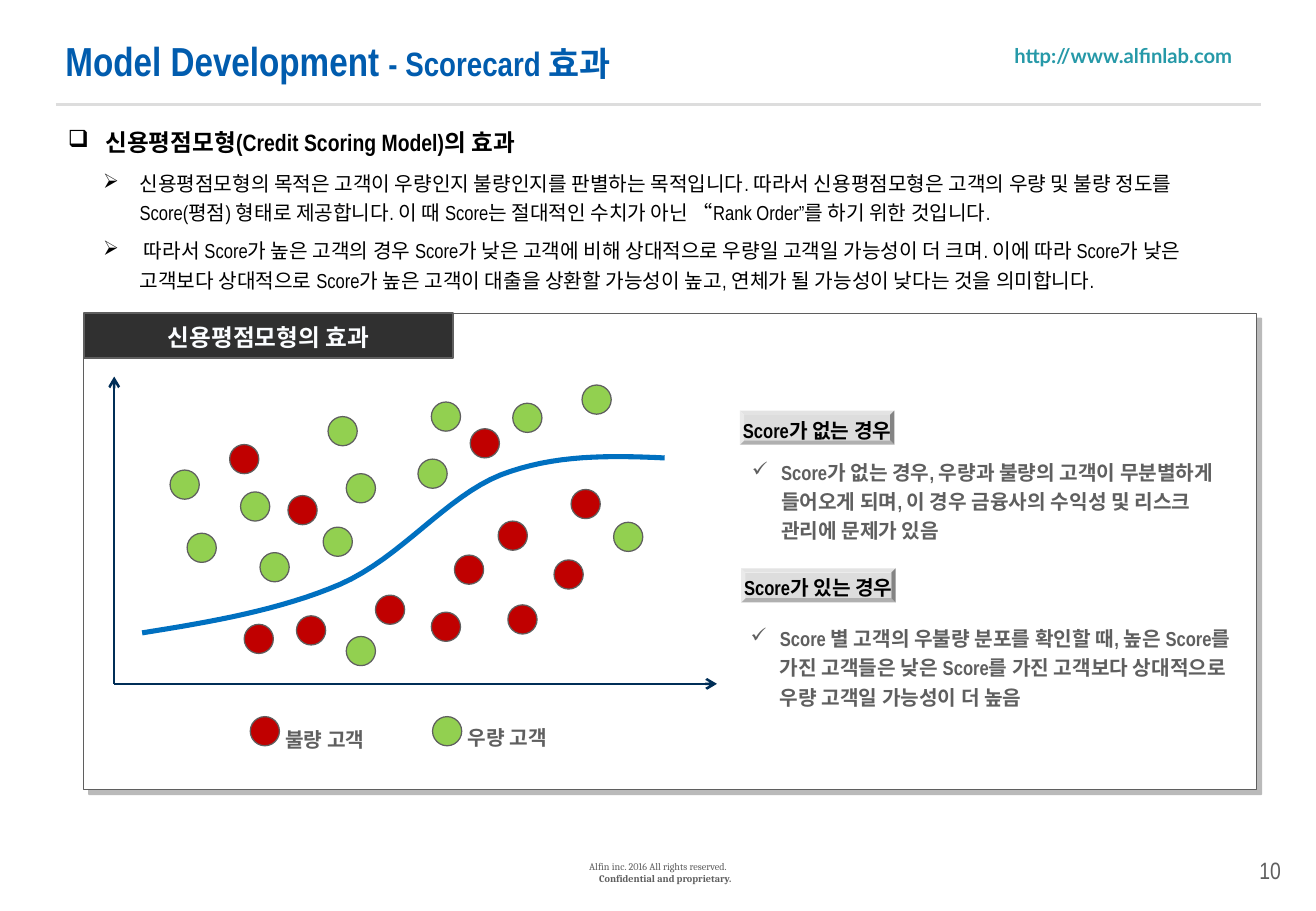
from dataclasses import dataclass
from typing import NamedTuple

from lxml import etree
from pptx import Presentation
from pptx.dml.color import RGBColor
from pptx.enum.shapes import MSO_CONNECTOR, MSO_SHAPE
from pptx.enum.text import MSO_ANCHOR, PP_ALIGN
from pptx.oxml.ns import qn
from pptx.util import Emu, Pt

PX = 9144  # EMU per px, 100 px to the inch
STRAIGHT = MSO_CONNECTOR.STRAIGHT
RECT, OVAL, BEVEL = MSO_SHAPE.RECTANGLE, MSO_SHAPE.OVAL, MSO_SHAPE.BEVEL
TOP, MIDDLE = MSO_ANCHOR.TOP, MSO_ANCHOR.MIDDLE
LEFT, CENTER, RIGHT = PP_ALIGN.LEFT, PP_ALIGN.CENTER, PP_ALIGN.RIGHT
NARROW = "Arial Narrow"
DOT = 24
CURVE_STEPS = 16

COLORS = {
    "white": "FFFFFF", "black": "000000", "gray": "5F5F5F", "silver": "DDDDDD",
    "header": "303030", "header_text": "FBFDFF", "title": "015CAE", "url": "2699A8",
    "axis": "002E57", "curve": "0070C0", "bad": "C00000", "good": "92D050",
    "shadow": "777777",
}


class Box(NamedTuple):
    left: int
    top: int
    width: int
    height: int


@dataclass
class Span:
    text: str
    size: float = 12
    color: str = "gray"
    bold: bool = True
    font: str = NARROW


@dataclass
class Para:
    spans: list[Span]
    align: PP_ALIGN = LEFT
    spacing: float = 1.0
    before: float = 0
    after: float = 0
    bullet: str = ""
    margin: int = 0
    hanging: int = 0


@dataclass
class Label:
    box: Box
    paras: list[Para]
    anchor: MSO_ANCHOR = MIDDLE


def rgb(name: str) -> RGBColor:
    return RGBColor.from_string(COLORS[name])


def place(box: Box) -> list[Emu]:
    return [Emu(value * PX) for value in box]


def write(frame, paras: list[Para], anchor: MSO_ANCHOR = MIDDLE, wrap: bool = True) -> None:
    frame.word_wrap = wrap
    frame.vertical_anchor = anchor
    for index, para in enumerate(paras):
        paragraph = frame.paragraphs[0] if index == 0 else frame.add_paragraph()
        paragraph.alignment = para.align
        paragraph.line_spacing = para.spacing
        paragraph.space_before = Pt(para.before)
        paragraph.space_after = Pt(para.after)
        properties = paragraph._p.get_or_add_pPr()
        properties.set("marL", str(para.margin * PX))
        properties.set("indent", str(-para.hanging * PX))
        if para.bullet:
            etree.SubElement(properties, qn("a:buChar")).set("char", para.bullet)
        for number, span in enumerate(para.spans):
            if number and para.spans[number - 1].text.endswith("."):
                paragraph.add_line_break()
            run = paragraph.add_run()
            run.text = span.text
            run.font.size = Pt(span.size)
            run.font.name = span.font
            run.font.bold = span.bold
            run.font.color.rgb = rgb(span.color)


def add_label(page, label: Label) -> None:
    frame = page.shapes.add_textbox(*place(label.box)).text_frame
    write(frame, label.paras, label.anchor)


def add_block(page, kind: MSO_SHAPE, box: Box, fill: str, line_width: float = 0.75):
    block = page.shapes.add_shape(kind, *place(box))
    block.shadow.inherit = False
    block.fill.solid()
    block.fill.fore_color.rgb = rgb(fill)
    if line_width:
        block.line.color.rgb = rgb("gray")
        block.line.width = Pt(line_width)
    else:
        block.line.fill.background()
    return block


def add_line(page, start: tuple[int, int], end: tuple[int, int], color: str,
             width: float, arrow: bool = False) -> None:
    points = [Emu(value * PX) for value in (*start, *end)]
    line = page.shapes.add_connector(STRAIGHT, *points)
    line.line.color.rgb = rgb(color)
    line.line.width = Pt(width)
    if arrow:
        etree.SubElement(line.line._get_or_add_ln(), qn("a:tailEnd")).set("type", "arrow")
    etree.SubElement(line._element.spPr, qn("a:effectLst"))


def add_hard_shadow(shape) -> None:
    effects = shape._element.spPr.find(qn("a:effectLst"))
    shadow = etree.SubElement(effects, qn("a:outerShdw"), blurRad="0", dist="53340",
                              dir="2700000", algn="ctr", rotWithShape="0")
    color = etree.SubElement(shadow, qn("a:srgbClr"), val=COLORS["shadow"])
    etree.SubElement(color, qn("a:alpha"), val="50000")


def add_curve(page, knots: list[tuple[int, int]]) -> None:
    """Draw cubic Bezier arcs: each knot is followed by two control points."""
    points = []
    for first in range(0, len(knots) - 1, 3):
        arc = knots[first:first + 4]
        for step in range(1, CURVE_STEPS + 1):
            t = step / CURVE_STEPS
            weights = ((1 - t) ** 3, 3 * t * (1 - t) ** 2, 3 * t * t * (1 - t), t ** 3)
            points.append(tuple(round(PX * sum(w * knot[axis] for w, knot in zip(weights, arc)))
                                for axis in (0, 1)))
    builder = page.shapes.build_freeform(knots[0][0] * PX, knots[0][1] * PX)
    builder.add_line_segments(points, close=False)
    curve = builder.convert_to_shape()
    curve.shadow.inherit = False
    curve.fill.background()
    curve.line.color.rgb = rgb("curve")
    curve.line.width = Pt(3)


def detail(text: str) -> Para:
    return Para([Span(text, color="black", bold=False)], spacing=1.2, before=2.4, after=3,
                bullet="➢", margin=59, hanging=30)


def check(text: str) -> Para:
    return Para([Span(text)], spacing=1.2, bullet="✓", margin=24, hanging=24)


LABELS = [
    Label(Box(0, 703, 1083, 30), [Para([
        Span("Alfin inc. 2016 All rights reserved.", 6, bold=False, font="Cambria"),
        Span("Confidential and proprietary.", 6, font="Cambria"),
    ], CENTER, margin=12, hanging=12)]),
    Label(Box(793, 19, 263, 54),
          [Para([Span("http://www.alfinlab.com", 12, "url", font="Lato")], CENTER)]),
    Label(Box(46, 96, 994, 160), [
        Para([Span("신용평점모형(Credit Scoring Model)의 효과", 14, "black")], spacing=1.2,
             after=3.5, bullet="❑", margin=31, hanging=31),
        detail("신용평점모형의 목적은 고객이 우량인지 불량인지를 판별하는 목적입니다. 따라서 "
               "신용평점모형은 고객의 우량 및 불량 정도를 Score(평점) 형태로 제공합니다. 이 때 "
               "Score는 절대적인 수치가 아닌 “Rank Order”를 하기 위한 것입니다."),
        detail(" 따라서 Score가 높은 고객의 경우 Score가 낮은 고객에 비해 상대적으로 우량일 고객일 "
               "가능성이 더 크며. 이에 따라 Score가 낮은 고객보다 상대적으로 Score가 높은 고객이 "
               "대출을 상환할 가능성이 높고, 연체가 될 가능성이 낮다는 것을 의미합니다."),
    ], TOP),
    Label(Box(811, 700, 253, 35), [Para([Span("10", 14, bold=False)], RIGHT)], TOP),
    Label(Box(44, 19, 995, 66), [Para([Span("Model Development ", 24, "title"),
                                       Span("- Scorecard 효과", 20, "title")], spacing=0.9)]),
    Label(Box(375, 586, 95, 39), [Para([Span("우량 고객")], spacing=1.2)]),
    Label(Box(225, 587, 88, 39), [Para([Span("불량 고객")], spacing=1.2)]),
    Label(Box(608, 507, 420, 83), [check(
        "Score 별 고객의 우불량 분포를 확인할 때, 높은 Score를 가진 고객들은 낮은 Score를 가진 "
        "고객보다 상대적으로 우량 고객일 가능성이 더 높음")], TOP),
    Label(Box(609, 370, 420, 83), [check(
        "Score가 없는 경우, 우량과 불량의 고객이 무분별하게 들어오게 되며, 이 경우 금융사의 "
        "수익성 및 리스크 관리에 문제가 있음")], TOP),
]
CASES = [(Box(609, 338, 127, 28), "Score가 없는 경우"),
         (Box(610, 468, 127, 28), "Score가 있는 경우")]
CURVE = [(547, 377), (502, 375), (456, 374), (412, 391), (367, 409),
         (330, 459), (280, 481), (231, 502), (174, 512), (117, 521)]
LEGEND_DOTS = {"bad": [(206, 590)], "good": [(356, 590)]}
CUSTOMER_DOTS = {
    "bad": [(470, 403), (410, 429), (374, 457), (456, 461), (309, 490), (244, 507), (355, 504),
            (201, 514), (418, 498), (387, 353), (237, 408), (189, 366)],
    "good": [(285, 524), (505, 430), (214, 455), (266, 434), (422, 332), (344, 378), (355, 331),
             (154, 439), (198, 405), (285, 390), (270, 343), (140, 387), (479, 317)],
}


def main() -> None:
    deck = Presentation()
    deck.slide_width, deck.slide_height = Emu(1083 * PX), Emu(750 * PX)
    page = deck.slides.add_slide(deck.slide_layouts[6])

    add_line(page, (46, 86), (1038, 86), "silver", 2.25)
    add_hard_shadow(add_block(page, RECT, Box(69, 258, 965, 392), "white"))
    header = add_block(page, RECT, Box(69, 258, 304, 37), "header", 1)
    write(header.text_frame, [Para([Span("신용평점모형의 효과", 14, "header_text")],
                                   CENTER, 1.1)], wrap=False)
    add_curve(page, CURVE)
    for end in ((94, 310), (590, 563)):
        add_line(page, (94, 563), end, "axis", 1.5, arrow=True)
    for label in LABELS:
        add_label(page, label)
    for box, text in CASES:
        case = add_block(page, BEVEL, box, "silver", 0)
        write(case.text_frame, [Para([Span(text, color="black")], CENTER, 1.2)], wrap=False)
    for dots in (LEGEND_DOTS, CUSTOMER_DOTS):
        for group, spots in dots.items():
            for left, top in spots:
                add_block(page, OVAL, Box(left, top, DOT, DOT), group)
    deck.save("out.pptx")


if __name__ == "__main__":
    main()
